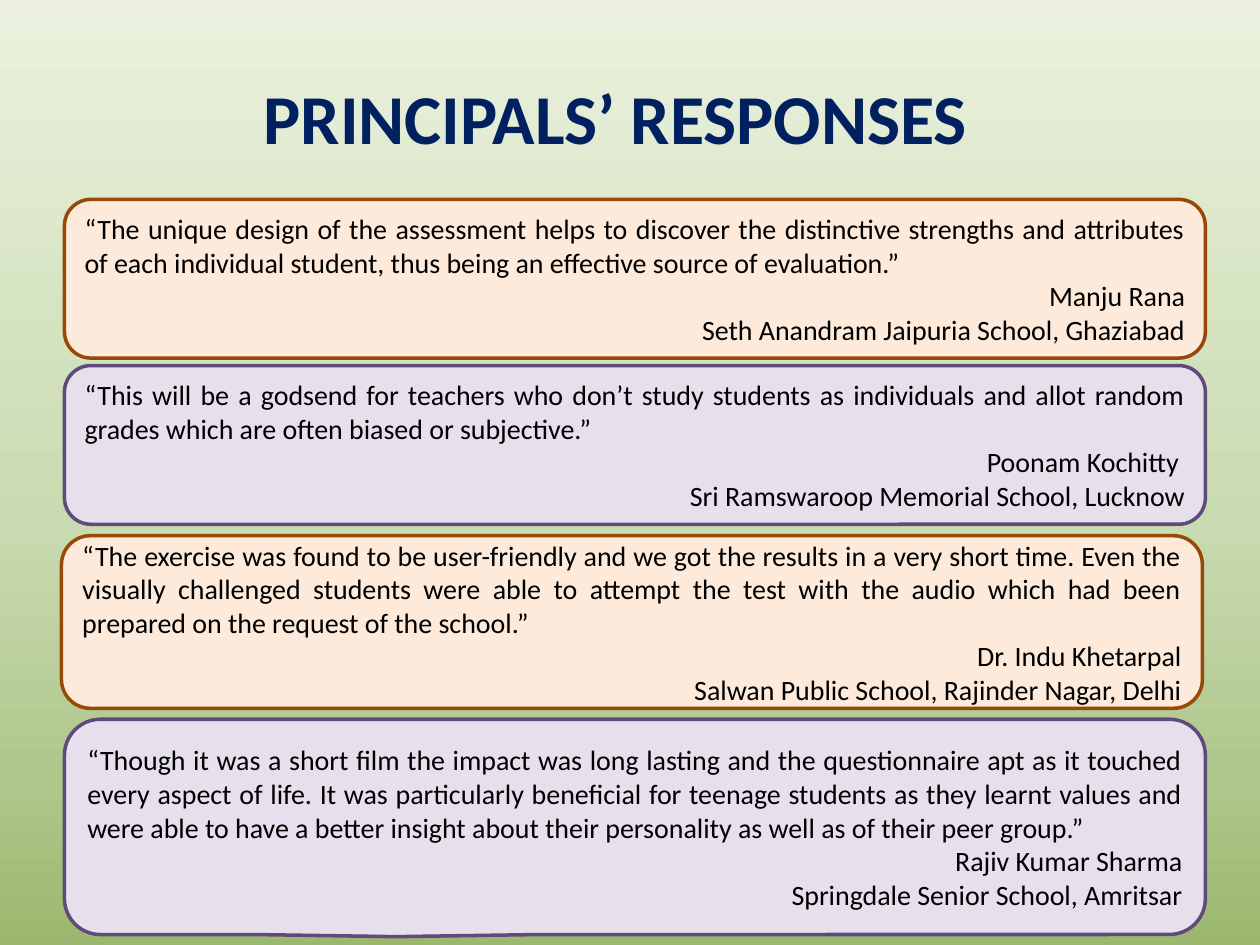
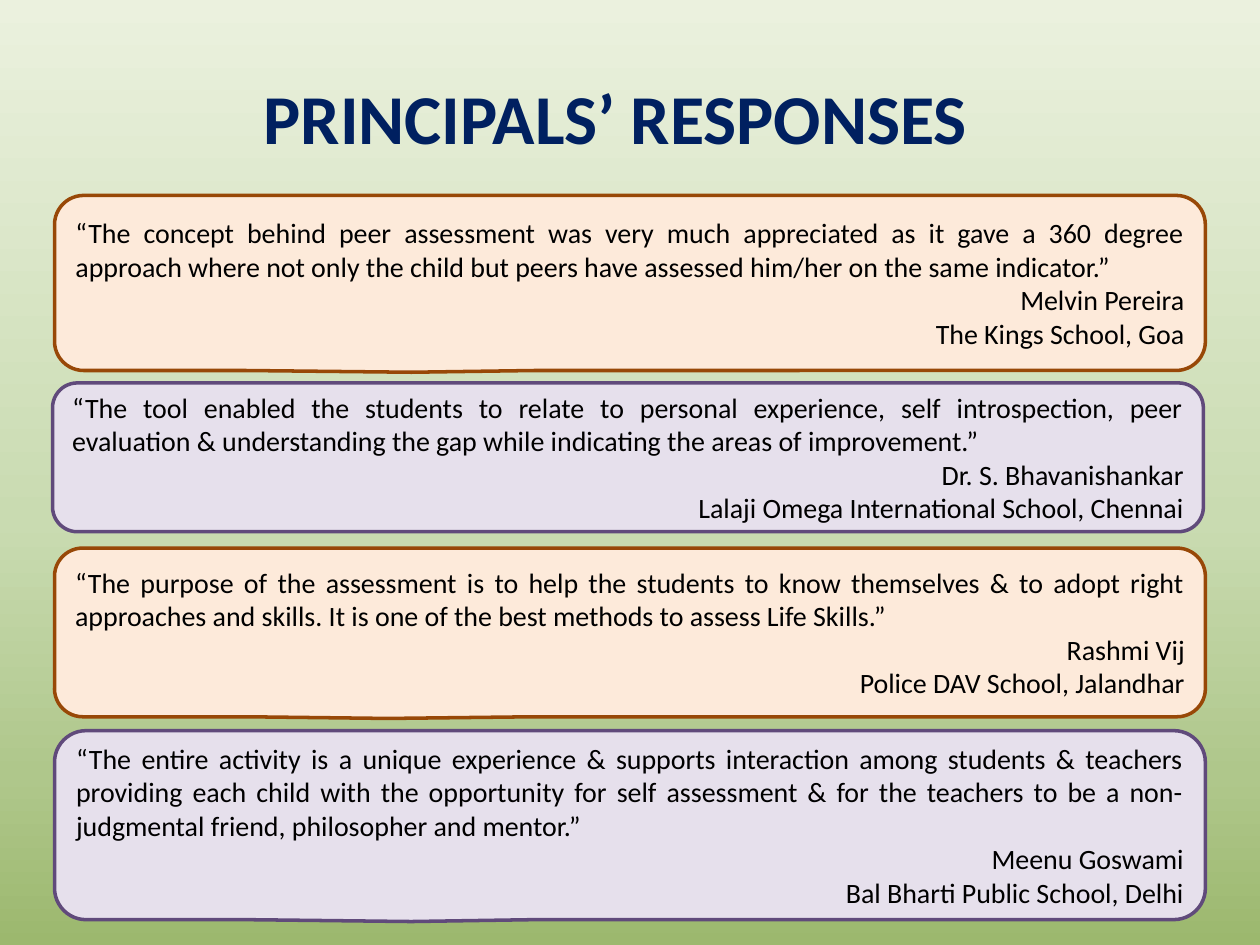
"""Build two slides of principals' responses in callout boxes."""
import collections

import lxml.etree
import pptx
import pptx.dml.color
import pptx.enum.shapes
import pptx.enum.text
import pptx.oxml.ns
import pptx.util

Cm = pptx.util.Cm
Align = pptx.enum.text.PP_ALIGN

COLORS = {
    "title": "002060",
    "text": "000000",
    "peach": "FDEADA",
    "brown": "984807",
    "lilac": "E6E0EC",
    "purple": "604A7B",
}
BACKGROUND_STOPS = [(0, "EBF1DE"), (55, "C9DBB1"), (82, "AFC78B"), (100, "9CB86E")]
FONT = "Calibri"
TITLE = "PRINCIPALS’ RESPONSES"
TITLE_BOX = (2.31, 0.76, 20.19, 3.18)
THEMES = {"warm": ("peach", "brown"), "cool": ("lilac", "purple")}

Response = collections.namedtuple("Response", "theme box tail quote principal school")

FIRST_RESPONSES = [
    Response(
        "warm", (1.3, 4.02, 23, 3.2), (-0.21, 0.5),
        "“The unique design of the assessment helps to discover the distinctive strengths "
        "and attributes of each individual student, thus being an effective source of "
        "evaluation.”",
        "Manju Rana", "Seth Anandram Jaipuria School, Ghaziabad"),
    Response(
        "cool", (1.3, 7.37, 23, 3.2), (-0.5, 0.24),
        "“This will be a godsend for teachers who don’t study students as individuals and "
        "allot random grades which are often biased or subjective.”",
        "Poonam Kochitty ", "Sri Ramswaroop Memorial School, Lucknow"),
    Response(
        "warm", (1.24, 10.8, 23, 3.48), (-0.5, 0.16),
        "“The exercise was found to be user-friendly and we got the results in a very short "
        "time. Even the visually challenged students were able to attempt the test with the "
        "audio which had been prepared on the request of the school.”",
        "Dr. Indu Khetarpal", "Salwan Public School, Rajinder Nagar, Delhi"),
    Response(
        "cool", (1.3, 14.5, 23, 4.34), (-0.21, 0.51),
        "“Though it was a short film the impact was long lasting and the questionnaire apt "
        "as it touched every aspect of life. It was particularly beneficial for teenage "
        "students as they learnt values and were able to have a better insight about their "
        "personality as well as of their peer group.”",
        "Rajiv Kumar Sharma", "Springdale Senior School, Amritsar"),
]

SECOND_RESPONSES = [
    Response(
        "warm", (1.1, 3.94, 23.2, 3.53), (-0.19, 0.51),
        "“The concept behind peer assessment was very much appreciated as it gave a 360 "
        "degree approach where not only the child but peers have assessed him/her on the "
        "same indicator.”",
        "Melvin Pereira", "The Kings School, Goa"),
    Response(
        "cool", (1.06, 7.72, 23.2, 3), (-0.5, 0.21),
        "“The tool enabled the students to relate to personal experience, self "
        "introspection, peer evaluation & understanding the gap while indicating the areas "
        "of improvement.”",
        "Dr. S. Bhavanishankar", "Lalaji Omega International School, Chennai"),
    Response(
        "warm", (1.1, 11.05, 23.2, 3.4), (-0.21, 0.51),
        "“The purpose of the assessment is to help the students to know themselves & to "
        "adopt right approaches and skills. It is one of the best methods to assess Life "
        "Skills.”",
        "Rashmi Vij", "Police DAV School, Jalandhar"),
    Response(
        "cool", (1.1, 14.73, 23.2, 3.81), (-0.19, 0.51),
        "“The entire activity is a unique experience & supports interaction among students "
        "& teachers providing each child with the opportunity for self assessment & for the "
        "teachers to be a non-judgmental friend, philosopher and mentor.”",
        "Meenu Goswami", "Bal Bharti Public School, Delhi"),
]


def rgb(name):
    """Return the named colour."""
    return pptx.dml.color.RGBColor.from_string(COLORS[name])


def write(paragraph, text, size=16, color="text", bold=False, align=Align.RIGHT):
    """Fill a paragraph with formatted text."""
    paragraph.alignment = align
    run = paragraph.add_run()
    run.text = text
    run.font.name = FONT
    run.font.size = pptx.util.Pt(size)
    run.font.bold = bold
    run.font.color.rgb = rgb(color)


def paint_background(master):
    """Give the master the vertical green gradient."""
    fill = master.background.fill
    fill.gradient()
    fill.gradient_angle = 270
    qn = pptx.oxml.ns.qn
    stops = next(master.background._cSld.iter(qn("a:gsLst")))
    for stop in list(stops):
        stops.remove(stop)
    for percent, color in BACKGROUND_STOPS:
        stop = lxml.etree.SubElement(stops, qn("a:gs"), pos=str(percent * 1000))
        lxml.etree.SubElement(stop, qn("a:srgbClr"), val=color)


def add_title(slide, box):
    """Place the centred title in the box."""
    frame = slide.shapes.add_textbox(*map(Cm, box)).text_frame
    frame.word_wrap = True
    frame.vertical_anchor = pptx.enum.text.MSO_ANCHOR.MIDDLE
    write(frame.paragraphs[0], TITLE, size=40, color="title", bold=True, align=Align.CENTER)


def add_response(slide, response):
    """Place one quotation with its signature in a callout."""
    callout = slide.shapes.add_shape(
        pptx.enum.shapes.MSO_SHAPE.ROUNDED_RECTANGULAR_CALLOUT, *map(Cm, response.box))
    callout.shadow.inherit = False
    callout.adjustments[0], callout.adjustments[1] = response.tail
    fill, outline = THEMES[response.theme]
    callout.fill.solid()
    callout.fill.fore_color.rgb = rgb(fill)
    callout.line.color.rgb = rgb(outline)
    callout.line.width = pptx.util.Pt(2)
    frame = callout.text_frame
    frame.word_wrap = True
    frame.vertical_anchor = pptx.enum.text.MSO_ANCHOR.MIDDLE
    write(frame.paragraphs[0], response.quote, align=Align.JUSTIFY)
    for signature in (response.principal, response.school):
        write(frame.add_paragraph(), signature)


def add_responses_slide(deck, responses):
    """Add a slide with the title and its responses."""
    slide = deck.slides.add_slide(deck.slide_layouts[6])
    add_title(slide, TITLE_BOX)
    for response in responses:
        add_response(slide, response)


def main():
    """Build and save the deck."""
    deck = pptx.Presentation()
    deck.slide_width, deck.slide_height = Cm(25.4), Cm(19.05)
    paint_background(deck.slide_master)
    for responses in (FIRST_RESPONSES, SECOND_RESPONSES):
        add_responses_slide(deck, responses)
    deck.save("out.pptx")


if __name__ == "__main__":
    main()
